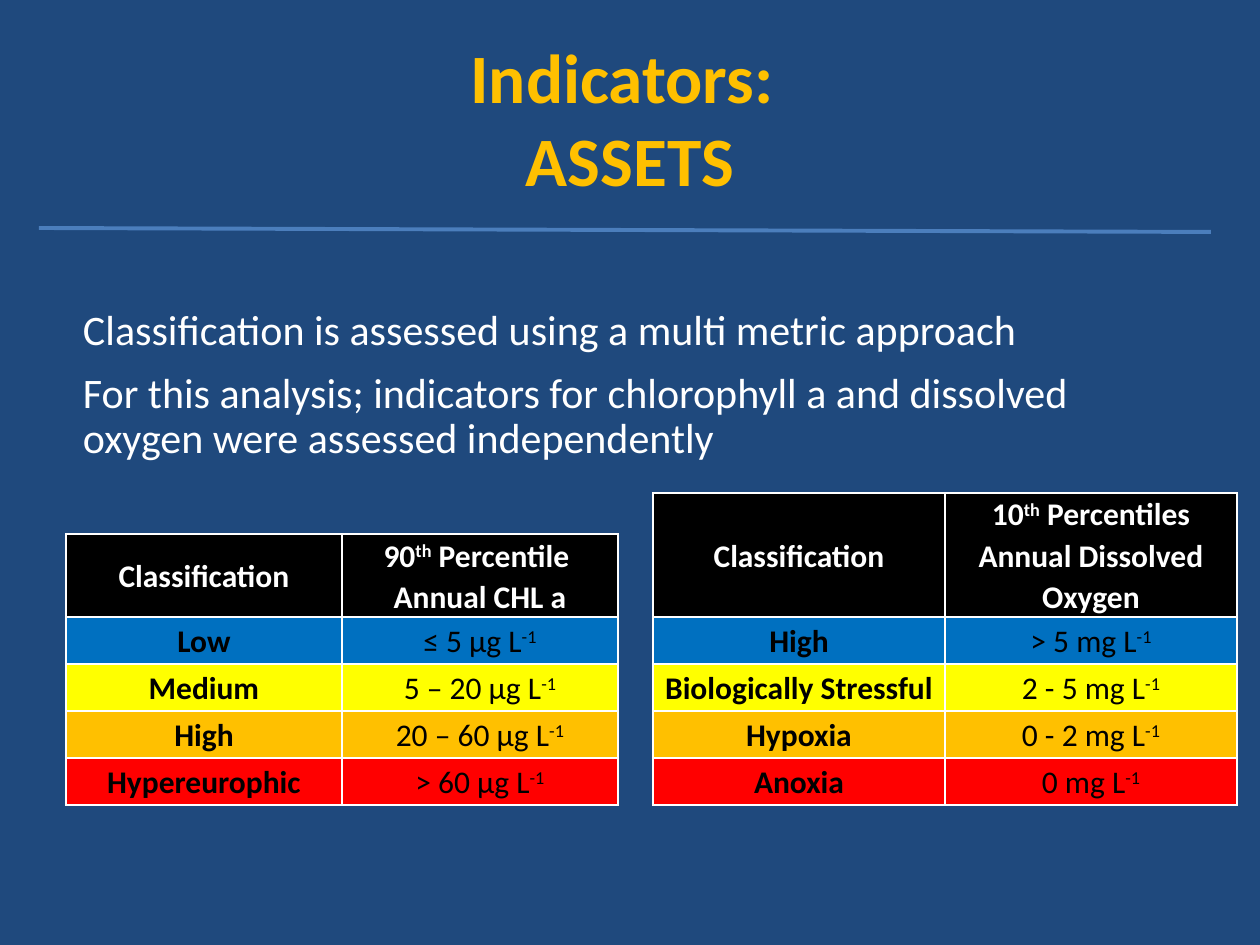
import pptx
import pptx.dml.color
import pptx.enum.shapes
import pptx.enum.text
import pptx.oxml.ns
import pptx.util
from lxml import etree

COLORS = {
    "navy": "1F497D", "gold": "FFC000", "white": "FFFFFF", "black": "000000",
    "blue": "0070C0", "yellow": "FFFF00", "red": "FF0000", "rule": "4B7EBC",
}
LEVELS = ["blue", "yellow", "gold", "red"]
CENTER = pptx.enum.text.PP_ALIGN.CENTER
MIDDLE = pptx.enum.text.MSO_ANCHOR.MIDDLE


def px(n):
    return pptx.util.Inches(n / 126)


def rgb(name):
    return pptx.dml.color.RGBColor.from_string(COLORS[name])


def child(parent, tag, **attrs):
    return etree.SubElement(parent, pptx.oxml.ns.qn(tag), attrs)


class Deck:
    font = "Calibri"

    def __init__(self):
        self.prs = pptx.Presentation()
        self.prs.slide_width, self.prs.slide_height = px(1260), px(945)
        self.s = self.prs.slides.add_slide(self.prs.slide_layouts[1])
        fill = self.s.background.fill
        fill.solid()
        fill.fore_color.rgb = rgb("navy")

    def style(self, p, size, color, bold=False):
        p.font.name, p.font.size, p.font.bold = self.font, pptx.util.Pt(size), bold
        p.font.color.rgb = rgb(color)

    def placeholder(self, idx, box, text):
        sp = self.s.placeholders[idx]
        sp.left, sp.top, sp.width, sp.height = map(px, box)
        tf = sp.text_frame
        tf.text = text
        tf.auto_size = pptx.enum.text.MSO_AUTO_SIZE.NONE
        return tf

    def title(self, box, text):
        tf = self.placeholder(0, box, text)
        tf.vertical_anchor = MIDDLE
        p = tf.paragraphs[0]
        p.alignment = CENTER
        self.style(p, 39.6, "gold", True)

    def body(self, box, lines):
        tf = self.placeholder(1, box, "\n".join(lines))
        tf.margin_left = tf.margin_right = px(9)
        tf.margin_top = tf.margin_bottom = px(5)
        for p in tf.paragraphs:
            p.line_spacing, p.space_before = 0.9, pptx.util.Pt(10)
            self.style(p, 24, "white")
            pPr = p._p.get_or_add_pPr()
            pPr.set("marL", "0")
            pPr.set("indent", "0")
            pPr.insert_element_before(
                pptx.oxml.parse_xml(f"<a:buNone {pptx.oxml.ns.nsdecls('a')}/>"),
                "a:tabLst", "a:defRPr", "a:extLst")

    def cell(self, cell, text, fill, color, bold):
        cell.margin_left = cell.margin_right = px(8)
        cell.margin_top = cell.margin_bottom = 0
        cell.vertical_anchor = MIDDLE
        tcPr = cell._tc.get_or_add_tcPr()
        for side in "LRTB":
            ln = child(tcPr, f"a:ln{side}", w="12700")
            child(child(ln, "a:solidFill"), "a:srgbClr", val=COLORS["white"])
        cell.fill.solid()
        cell.fill.fore_color.rgb = rgb(fill)
        tf = cell.text_frame
        for i, line in enumerate(text.split("\n")):
            p = tf.add_paragraph() if i else tf.paragraphs[0]
            p.alignment, p.line_spacing = CENTER, 1.07
            self.style(p, 18, color, bold)
            for j, part in enumerate(line.split("^")):
                if part:
                    r = p.add_run()
                    r.text = part
                    if j % 2:
                        r.font._element.set("baseline", "30000")

    def table(self, left, bottom, col_width, header_height, rows, row_height=47):
        height = header_height + row_height * (len(rows) - 1)
        frame = self.s.shapes.add_table(len(rows), 2, px(left), px(bottom - height),
                                        px(2 * col_width), px(height))
        table = frame.table
        table.first_row = table.horz_banding = False
        for col in table.columns:
            col.width = px(col_width)
        for i, row in enumerate(rows):
            table.rows[i].height = px(row_height if i else header_height)
            fill, color = (LEVELS[i - 1], "black") if i else ("black", "white")
            for j, text in enumerate(row):
                self.cell(table.cell(i, j), text, fill, color, i == 0 or j == 0)

    def line(self, x1, y1, x2, y2):
        sp = self.s.shapes.add_connector(
            pptx.enum.shapes.MSO_CONNECTOR.STRAIGHT, px(x1), px(y1), px(x2), px(y2))
        sp.line.color.rgb = rgb("rule")
        sp.line.width = pptx.util.Pt(2.25)
        child(sp._element.spPr, "a:effectLst")


def main():
    deck = Deck()
    deck.title((63, 38, 1134, 158), "Indicators: \vASSETS")
    deck.body((74, 304, 1086, 213), [
        "Classification is assessed using a multi metric approach",
        "For this analysis; indicators for chlorophyll a and dissolved oxygen "
        "were assessed independently",
    ])
    deck.table(66, 805, 276, 83, [
        ("Classification", "90^th^ Percentile \nAnnual CHL a"),
        ("Low", "≤ 5 μg L^-1"),
        ("Medium", "5 – 20 μg L^-1"),
        ("High", "20 – 60 μg L^-1"),
        ("Hypereurophic", "> 60 μg L^-1"),
    ])
    deck.table(653, 805, 292, 124, [
        ("Classification", "10^th^ Percentiles Annual Dissolved Oxygen"),
        ("High", "> 5 mg L^-1"),
        ("Biologically Stressful", "2 - 5 mg L^-1"),
        ("Hypoxia", "0 - 2 mg L^-1"),
        ("Anoxia", "0 mg L^-1"),
    ])
    deck.line(39, 228, 1211, 232)
    deck.prs.save("out.pptx")


if __name__ == "__main__":
    main()
